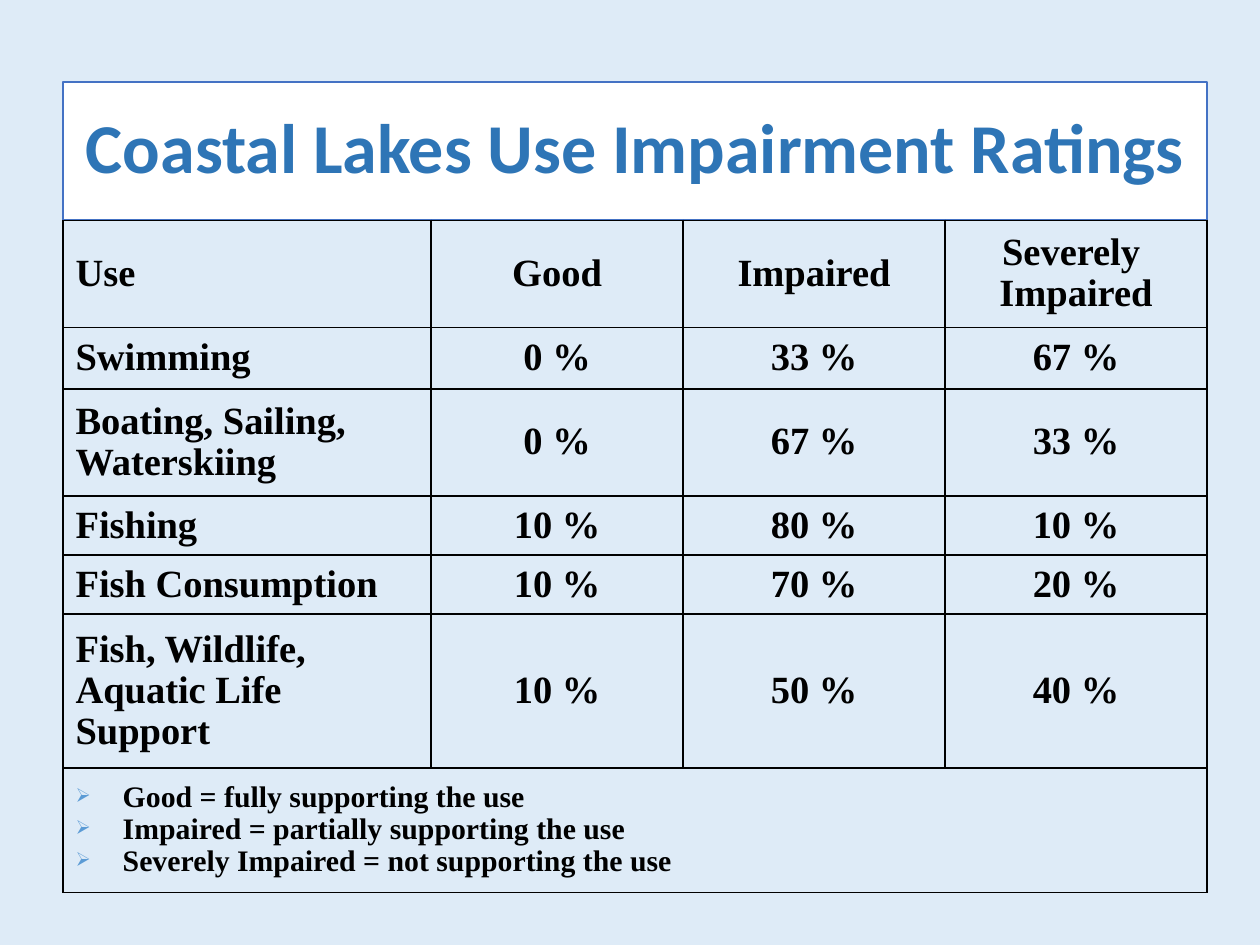
from lxml import etree
from pptx import Presentation
from pptx import util as u
from pptx.dml.color import RGBColor
from pptx.enum import shapes, text
from pptx.oxml import ns

Cm, Pt = u.Cm, u.Pt
COLORS = {
    "back": "DEEBF7", "white": "FFFFFF", "frame": "4472C4",
    "title": "2E75B6", "ink": "000000", "bullet": "5B9BD5",
}
HEADER = ["Use", "Good", "Impaired", "Severely \nImpaired"]
RATINGS = [
    ("Swimming", 0, 33, 67),
    ("Boating, Sailing,\nWaterskiing", 0, 67, 33),
    ("Fishing", 10, 80, 10),
    ("Fish Consumption", 10, 70, 20),
    ("Fish, Wildlife,\nAquatic Life\nSupport", 10, 50, 40),
]
LEGEND = "\n".join([
    "Good = fully supporting the use",
    "Impaired = partially supporting the use",
    "Severely Impaired = not supporting the use",
])
COLUMNS = [7.42, 5.08, 5.28, 5.28]
ROWS = [2.16, 1.24, 2.16, 1.19, 1.19, 3.1, 2.51]


def rgb(name):
    """Return the named colour."""
    return RGBColor.from_string(COLORS[name])


def add_xml(parent, tag, **attrs):
    """Append a DrawingML element and return it."""
    return etree.SubElement(parent, ns.qn(tag), attrs)


def add_bullet(p):
    """Give a paragraph a small coloured arrow bullet."""
    pPr = p._p.get_or_add_pPr()
    add_xml(add_xml(pPr, "a:buClr"), "a:srgbClr", val=COLORS["bullet"])
    add_xml(pPr, "a:buSzPct", val="65000")
    add_xml(pPr, "a:buChar", char="➢")


def write(tf, words, size=22, font="Times New Roman", color="ink",
          align="LEFT", spacing=0.97, hang=0, bullet=False):
    """Fill a text frame with one paragraph for each line of words."""
    tf.word_wrap = True
    tf.vertical_anchor = text.MSO_ANCHOR.MIDDLE
    for i, line in enumerate(words.split("\n")):
        p = tf.add_paragraph() if i else tf.paragraphs[0]
        p.alignment = getattr(text.PP_ALIGN, align)
        p.line_spacing = spacing
        if hang:
            pPr = p._p.get_or_add_pPr()
            pPr.set("marL", str(Cm(hang)))
            pPr.set("indent", str(-Cm(hang)))
        if bullet:
            add_bullet(p)
        r = p.add_run()
        r.text = line
        r.font.size, r.font.name, r.font.bold = Pt(size), font, True
        r.font.color.rgb = rgb(color)


def add_title(s, x, y, w, h):
    """Draw the framed title."""
    sp = s.shapes.add_shape(shapes.MSO_SHAPE.RECTANGLE, Cm(x), Cm(y), Cm(w), Cm(h))
    sp.shadow.inherit = False
    sp.fill.solid()
    sp.fill.fore_color.rgb = rgb("white")
    sp.line.color.rgb = rgb("frame")
    sp.line.width = Pt(1)
    write(sp.text_frame, "Coastal Lakes Use Impairment Ratings", size=40,
          font="Calibri", color="title", align="CENTER", spacing=0.9)


def style_cell(cell):
    """Give a cell thin borders and no fill."""
    tcPr = cell._tc.get_or_add_tcPr()
    for side in "LRTB":
        ln = add_xml(tcPr, f"a:ln{side}", w=str(Pt(1)))
        add_xml(add_xml(ln, "a:solidFill"), "a:srgbClr", val=COLORS["ink"])
    cell.fill.background()


def add_ratings(s, x, y):
    """Draw the ratings table with the legend in its last row."""
    table = s.shapes.add_table(len(ROWS), len(COLUMNS), Cm(x), Cm(y),
                               Cm(sum(COLUMNS)), Cm(sum(ROWS))).table
    table.first_row = table.horz_banding = False
    for col, width in zip(table.columns, COLUMNS):
        col.width = Cm(width)
    for row, height in zip(table.rows, ROWS):
        row.height = Cm(height)
    for cell in table.iter_cells():
        style_cell(cell)
    lines = [HEADER] + [[use] + [f"{n} %" for n in shares] for use, *shares in RATINGS]
    for i, line in enumerate(lines):
        for j, words in enumerate(line):
            write(table.cell(i, j).text_frame, words, hang=0.95,
                  align="CENTER" if j else "LEFT")
            table.cell(i, j).vertical_anchor = text.MSO_ANCHOR.MIDDLE
    last = len(ROWS) - 1
    legend = table.cell(last, 0)
    legend.merge(table.cell(last, len(COLUMNS) - 1))
    write(legend.text_frame, LEGEND, size=17, hang=0.95, bullet=True)
    legend.vertical_anchor = text.MSO_ANCHOR.MIDDLE


def main():
    """Build and save the slide."""
    prs = Presentation()
    prs.slide_width, prs.slide_height = Cm(25.4), Cm(19.05)
    s = prs.slides.add_slide(prs.slide_layouts[6])
    s.background.fill.solid()
    s.background.fill.fore_color.rgb = rgb("back")
    x, y, h = 1.27, 1.65, 2.79
    add_title(s, x, y, sum(COLUMNS), h)
    add_ratings(s, x, y + h)
    prs.save("out.pptx")


if __name__ == "__main__":
    main()
